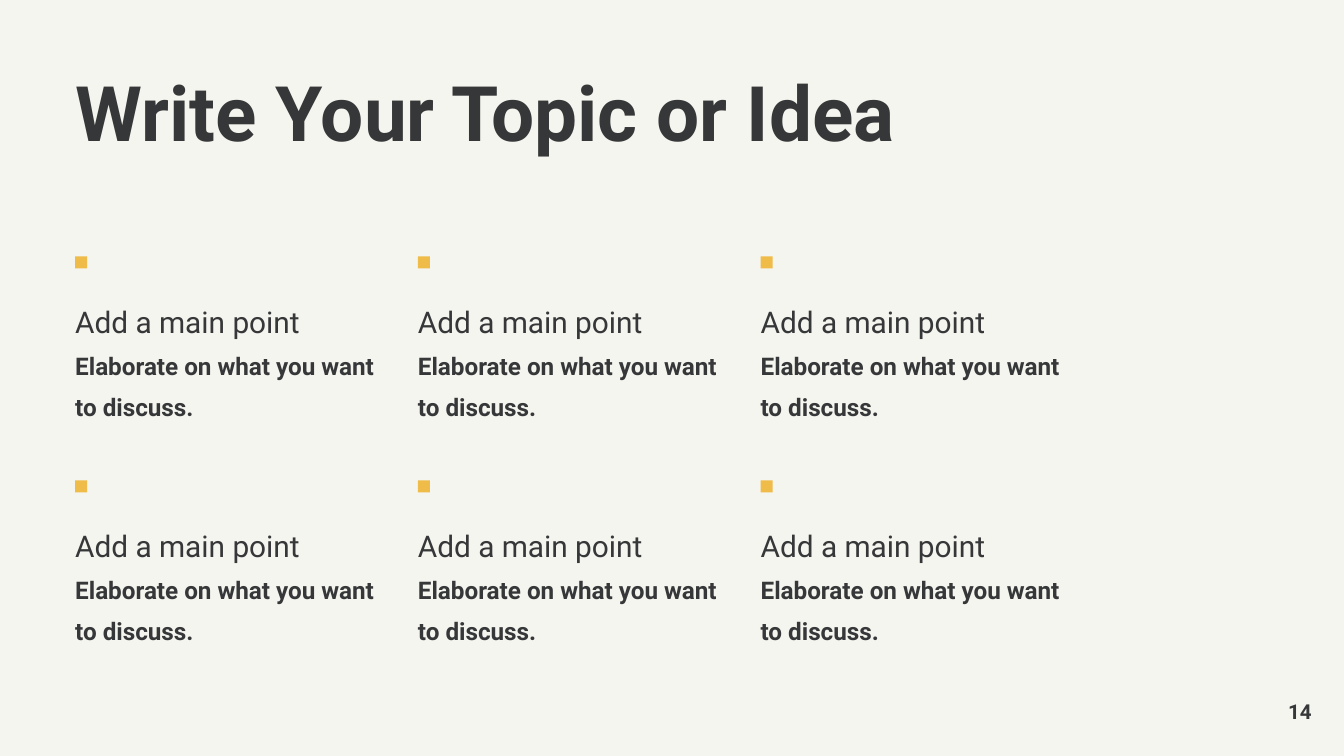
import pptx
import pptx.dml.color
import pptx.enum.shapes
import pptx.enum.text
import pptx.util

Pt = pptx.util.Pt
COLORS = {"background": "F5F5EF", "text": "363739", "accent": "EFBC49"}
FONT = "Roboto"

# Grid of points, in points
COLUMNS, ROWS = 3, 2
LEFT, TOP = 40.3, 137.4
COLUMN_STEP, ROW_STEP = 183.6, 120
MARKER_SIZE = 6.4
TEXT_DROP = 17.6


def color(name):
    return pptx.dml.color.RGBColor.from_string(COLORS[name])


def fill_text(box, lines, spacing=1.0, align="LEFT", anchor="TOP"):
    """Fill a box with one paragraph per (text, size, bold) line."""
    frame = box.text_frame
    frame.text = "\n".join(text for text, size, bold in lines)
    frame.word_wrap = True
    frame.auto_size = pptx.enum.text.MSO_AUTO_SIZE.NONE
    frame.vertical_anchor = pptx.enum.text.MSO_ANCHOR[anchor]
    frame.margin_left = frame.margin_right = 0
    frame.margin_top = frame.margin_bottom = 0
    for para, (text, size, bold) in zip(frame.paragraphs, lines):
        para.alignment = pptx.enum.text.PP_ALIGN[align]
        para.line_spacing = spacing
        para.space_before = para.space_after = Pt(0)
        for span in para.runs:
            span.font.name = FONT
            span.font.size = Pt(size)
            span.font.bold = bold
            span.font.color.rgb = color("text")


def add_title(page, text):
    title = page.shapes.title
    title.left, title.top = Pt(LEFT), Pt(40.3)
    title.width, title.height = Pt(510.5), Pt(57)
    fill_text(title, [(text, 41, True)], spacing=0.9)


def add_marker(page, left, top):
    marker = page.shapes.add_shape(
        pptx.enum.shapes.MSO_SHAPE.RECTANGLE,
        Pt(left), Pt(top), Pt(MARKER_SIZE), Pt(MARKER_SIZE))
    marker.shadow.inherit = False
    marker.fill.solid()
    marker.fill.fore_color.rgb = color("accent")
    marker.line.fill.background()


def add_point(page, left, top, heading, detail):
    add_marker(page, left, top)
    box = page.shapes.add_textbox(
        Pt(left), Pt(top + TEXT_DROP), Pt(166.3), Pt(75.6))
    fill_text(box, [(heading, 16, False), (detail, 13, True)], spacing=1.4)


def add_page_number(page, number):
    box = page.shapes.add_textbox(Pt(659.5), Pt(373.7), Pt(43.2), Pt(14.4))
    fill_text(box, [(number, 11, True)], align="RIGHT", anchor="MIDDLE")


def main():
    deck = pptx.Presentation()
    deck.slide_width, deck.slide_height = Pt(720), Pt(405)
    page = deck.slides.add_slide(deck.slide_layouts.get_by_name("Title Only"))

    # Background and title
    page.background.fill.solid()
    page.background.fill.fore_color.rgb = color("background")
    add_title(page, "Write Your Topic or Idea")

    # Main points
    for row in range(ROWS):
        for column in range(COLUMNS):
            add_point(page, LEFT + column * COLUMN_STEP, TOP + row * ROW_STEP,
                      "Add a main point",
                      "Elaborate on what you want to discuss.")

    # Footer
    add_page_number(page, "14")
    deck.save("out.pptx")


if __name__ == "__main__":
    main()
